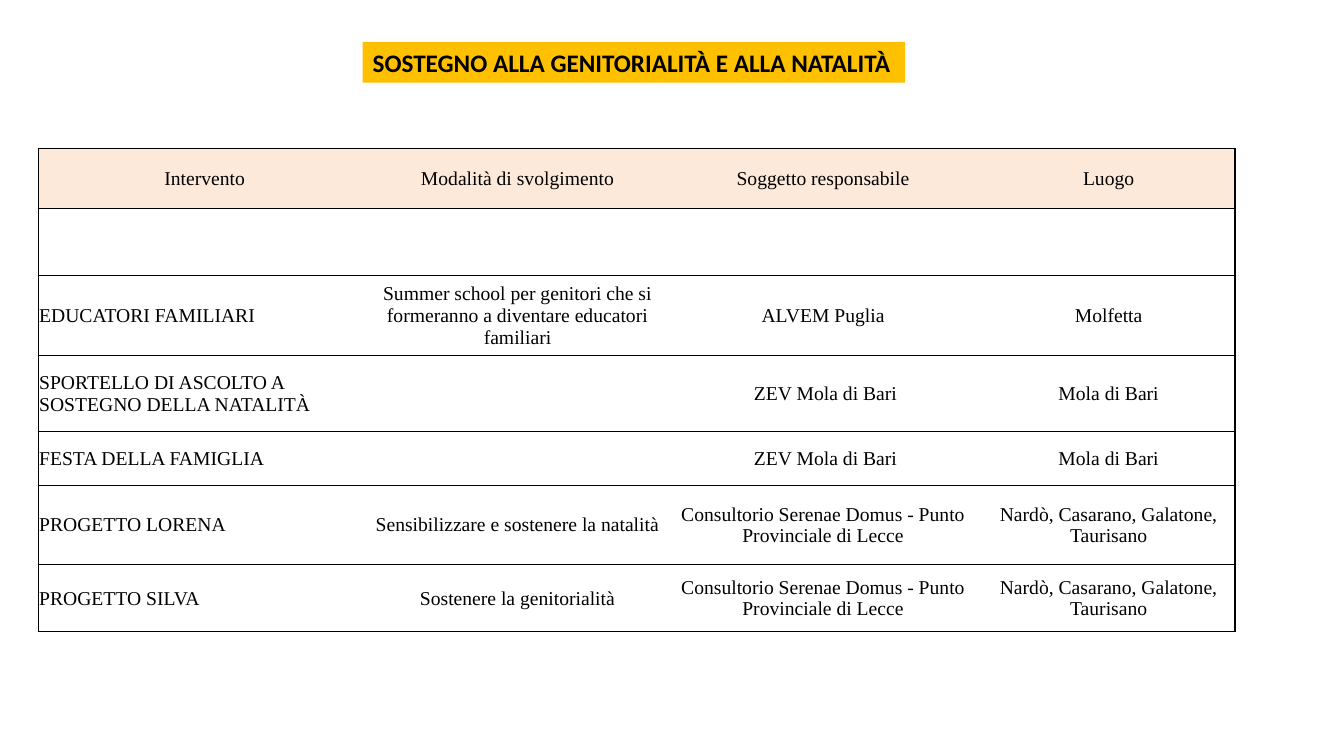
import pptx
import pptx.util
import pptx.dml.color
import pptx.enum.text
import lxml.etree
from pptx.oxml.ns import qn

Pt = pptx.util.Pt
ALIGN = pptx.enum.text.PP_ALIGN
MIDDLE = pptx.enum.text.MSO_ANCHOR.MIDDLE

TITLE = "SOSTEGNO ALLA GENITORIALITÀ E ALLA NATALITÀ"
CONSULTORIO = "Consultorio Serenae Domus - Punto Provinciale di Lecce"
SALENTO = "Nardò, Casarano, Galatone, Taurisano"
ROWS = [
    ("Intervento", "Modalità di svolgimento", "Soggetto responsabile", "Luogo"),
    ("", "", "", ""),
    ("EDUCATORI FAMILIARI",
     "Summer school per genitori che si formeranno a diventare educatori familiari",
     "ALVEM Puglia", "Molfetta"),
    ("SPORTELLO DI ASCOLTO A SOSTEGNO DELLA NATALITÀ", "", " ZEV Mola di Bari", "Mola di Bari"),
    ("FESTA DELLA FAMIGLIA", "", " ZEV Mola di Bari", "Mola di Bari"),
    ("PROGETTO LORENA", "Sensibilizzare e sostenere la natalità", CONSULTORIO, SALENTO),
    ("PROGETTO SILVA", "Sostenere la genitorialità", CONSULTORIO, SALENTO),
]
COLUMN_WIDTHS = [238, 209, 227.5, 180.5]
ROW_HEIGHTS = [43, 47.5, 57, 54.5, 38.5, 56.5, 48]
HORIZONTAL_LINES = [1, 1, 0.5, 0.5, 0.5, 0.5, 0.5, 1]
VERTICAL_LINES = [1, 0, 0, 0, 1]
BLACK = "000000"
AMBER = "FFC000"
PEACH = "FDE9D9"


def color(value):
    return pptx.dml.color.RGBColor.from_string(value)


def fill_with(target, value):
    target.fill.solid()
    target.fill.fore_color.rgb = color(value)


def write_text(frame, text, font="Times New Roman", size=14, bold=False, align=ALIGN.CENTER):
    paragraph = frame.paragraphs[0]
    paragraph.alignment = align
    run = paragraph.add_run()
    run.text = text
    run.font.name = font
    run.font.size = Pt(size)
    run.font.bold = bold
    run.font.color.rgb = color(BLACK)


def set_border(cell, side, width):
    properties = cell._tc.get_or_add_tcPr()
    line = lxml.etree.SubElement(properties, qn("a:ln" + side), w=str(int(Pt(width))))
    if width:
        solid = lxml.etree.SubElement(line, qn("a:solidFill"))
        lxml.etree.SubElement(solid, qn("a:srgbClr"), val=BLACK)
    else:
        lxml.etree.SubElement(line, qn("a:noFill"))


def add_title(slide):
    title = slide.shapes.title
    title.left, title.top, title.width, title.height = Pt(259), Pt(30), Pt(387.5), Pt(29)
    fill_with(title, AMBER)
    frame = title.text_frame
    frame.word_wrap = False
    frame.auto_size = pptx.enum.text.MSO_AUTO_SIZE.NONE
    frame.vertical_anchor = MIDDLE
    write_text(frame, TITLE, font="Calibri", size=18, bold=True, align=ALIGN.LEFT)


def format_cell(cell, text, row, column):
    borders = {
        "L": VERTICAL_LINES[column],
        "R": VERTICAL_LINES[column + 1],
        "T": HORIZONTAL_LINES[row],
        "B": HORIZONTAL_LINES[row + 1],
    }
    for side, width in borders.items():
        set_border(cell, side, width)
    if row == 0:
        fill_with(cell, PEACH)
    else:
        cell.fill.background()
    cell.vertical_anchor = MIDDLE
    cell.margin_left = cell.margin_right = cell.margin_top = Pt(0.75)
    cell.margin_bottom = Pt(0)
    if text:
        left = column == 0 and row > 0
        write_text(cell.text_frame, text, align=ALIGN.LEFT if left else ALIGN.CENTER)


def add_interventions(slide):
    table = slide.shapes.add_table(
        len(ROWS), len(COLUMN_WIDTHS), Pt(27.2), Pt(106.2),
        Pt(sum(COLUMN_WIDTHS)), Pt(sum(ROW_HEIGHTS))).table
    table.first_row = False
    table.horz_banding = False
    for column, width in zip(table.columns, COLUMN_WIDTHS):
        column.width = Pt(width)
    for row, height in zip(table.rows, ROW_HEIGHTS):
        row.height = Pt(height)
    for row, texts in enumerate(ROWS):
        for column, text in enumerate(texts):
            format_cell(table.cell(row, column), text, row, column)


def main():
    presentation = pptx.Presentation()
    presentation.slide_width = Pt(960)
    presentation.slide_height = Pt(540)
    slide = presentation.slides.add_slide(presentation.slide_layouts[5])
    add_title(slide)
    add_interventions(slide)
    presentation.save("out.pptx")


if __name__ == "__main__":
    main()
